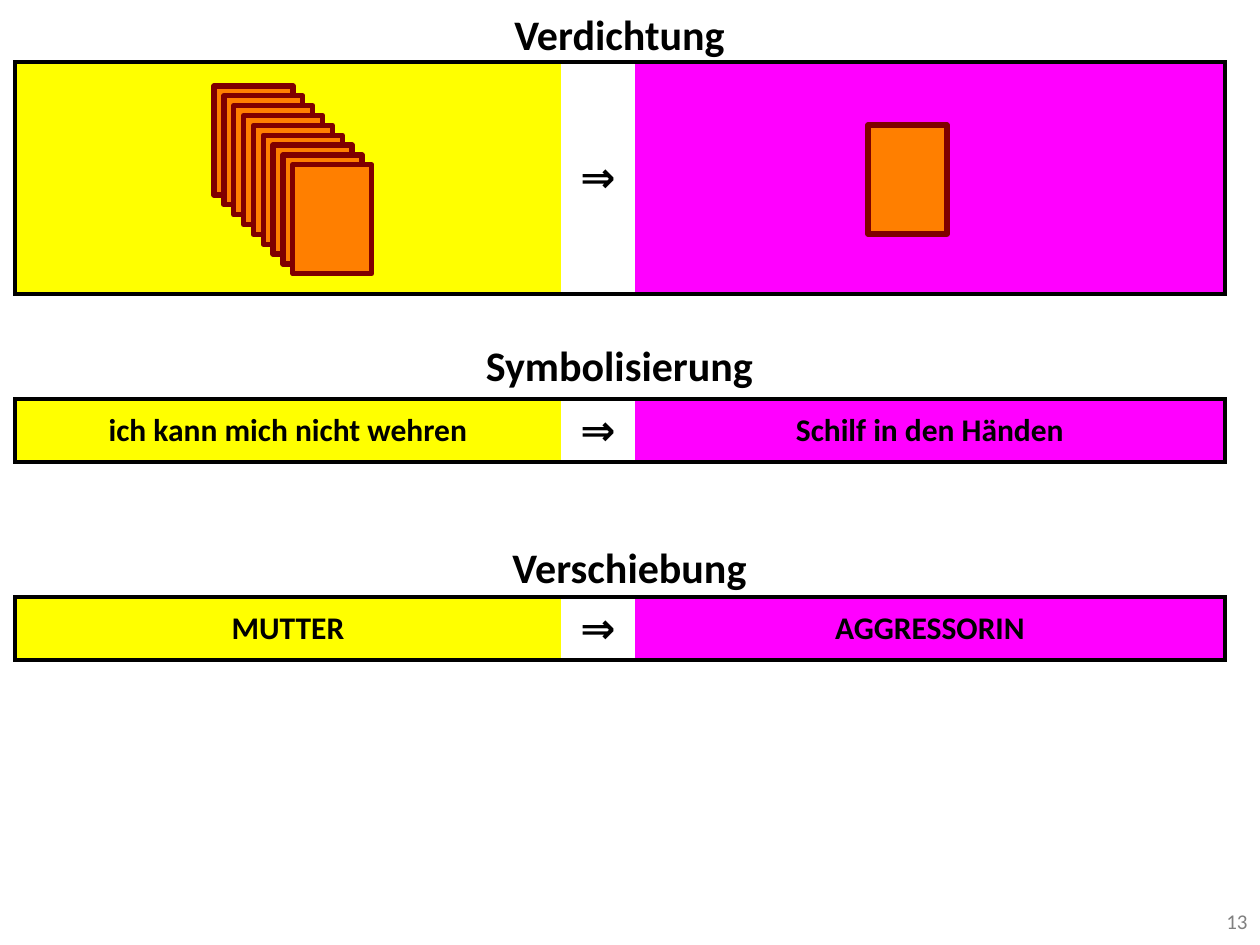
"""Build a slide on condensation, symbolisation and displacement."""
import dataclasses
import typing

import lxml.etree
import pptx
import pptx.dml.color
import pptx.enum.shapes
import pptx.enum.text
import pptx.oxml.ns
import pptx.util

PX = 914400 / 126
BLACK = pptx.dml.color.RGBColor(0x00, 0x00, 0x00)
GRAY = pptx.dml.color.RGBColor(0x80, 0x80, 0x80)
YELLOW = pptx.dml.color.RGBColor(0xFF, 0xFF, 0x00)
MAGENTA = pptx.dml.color.RGBColor(0xFF, 0x00, 0xFF)
ORANGE = pptx.dml.color.RGBColor(0xFF, 0x7F, 0x00)
MAROON = pptx.dml.color.RGBColor(0x7F, 0x00, 0x00)
FONT = "Calibri"
ARROW = "⇒"
CENTER = pptx.enum.text.PP_ALIGN.CENTER
RIGHT = pptx.enum.text.PP_ALIGN.RIGHT
MIDDLE = pptx.enum.text.MSO_ANCHOR.MIDDLE
COLUMNS = (546, 74, 590)
TABLE_LEFT = 15
HEADING_WIDTH, HEADING_HEIGHT = 1071, 49
CARD_WIDTH, CARD_HEIGHT = 79, 109
STACK_SIZE = 9
STACK_LEFT, STACK_TOP, STACK_STEP = 214, 86, 9.85


@dataclasses.dataclass(frozen=True)
class Section:
    """A heading above a row that turns one content into another."""

    heading: str
    heading_left: int
    heading_top: int
    table_top: int
    table_height: int
    source: str = ""
    target: str = ""
    is_title: bool = False


SECTIONS = (
    Section("Verdichtung", 84, 9, 62, 232),
    Section("Symbolisierung", 84, 340, 399, 63,
            "ich kann mich nicht wehren", "Schilf in den Händen"),
    Section("Verschiebung", 94, 542, 597, 63, "MUTTER", "AGGRESSORIN", True),
)


def px(length: float) -> pptx.util.Emu:
    """Turn pixels into EMU."""
    return pptx.util.Emu(round(length * PX))


def place(shape: typing.Any, left: float, top: float, width: float, height: float) -> None:
    """Move and size a shape in pixels."""
    shape.left, shape.top = px(left), px(top)
    shape.width, shape.height = px(width), px(height)


def write(frame: typing.Any, text: str, size: int, bold: bool = True,
          color: pptx.dml.color.RGBColor = BLACK, align: typing.Any = CENTER) -> None:
    """Write one formatted run into a text frame."""
    para = frame.paragraphs[0]
    para.alignment = align
    span = para.add_run()
    span.text = text
    span.font.name = FONT
    span.font.size = pptx.util.Pt(size)
    span.font.bold = bold
    span.font.color.rgb = color


def set_borders(cell: typing.Any, sides: str) -> None:
    """Draw the named sides of a cell and hide the others."""
    properties = cell._tc.get_or_add_tcPr()
    for side in "LRTB":
        line = lxml.etree.SubElement(properties, pptx.oxml.ns.qn(f"a:ln{side}"))
        if side not in sides:
            lxml.etree.SubElement(line, pptx.oxml.ns.qn("a:noFill"))
            continue
        line.set("w", str(pptx.util.Pt(2.25)))
        fill = lxml.etree.SubElement(line, pptx.oxml.ns.qn("a:solidFill"))
        lxml.etree.SubElement(fill, pptx.oxml.ns.qn("a:srgbClr"), val=str(BLACK))


def add_row(page: typing.Any, section: Section) -> None:
    """Add the three-cell table of a section."""
    table = page.shapes.add_table(
        1, len(COLUMNS), px(TABLE_LEFT), px(section.table_top),
        px(sum(COLUMNS)), px(section.table_height)).table
    table.first_row = table.horz_banding = False
    contents = (
        (section.source, 18, YELLOW, "LTB"),
        (ARROW, 24, None, "TB"),
        (section.target, 18, MAGENTA, "RTB"),
    )
    for index, (text, size, color, sides) in enumerate(contents):
        table.columns[index].width = px(COLUMNS[index])
        cell = table.cell(0, index)
        cell.vertical_anchor = MIDDLE
        set_borders(cell, sides)
        if color is None:
            cell.fill.background()
        else:
            cell.fill.solid()
            cell.fill.fore_color.rgb = color
        if text:
            write(cell.text_frame, text, size)


def add_label(page: typing.Any, left: int, top: int, width: int, height: int) -> typing.Any:
    """Add an empty wrapping text box."""
    box = page.shapes.add_textbox(px(left), px(top), px(width), px(height))
    box.text_frame.word_wrap = True
    box.text_frame.vertical_anchor = MIDDLE
    return box


def add_heading(page: typing.Any, section: Section) -> None:
    """Write a section heading, using the title placeholder where marked."""
    bounds = (section.heading_left, section.heading_top, HEADING_WIDTH, HEADING_HEIGHT)
    if section.is_title:
        box = page.shapes.title
        place(box, *bounds)
        box.text_frame.vertical_anchor = MIDDLE
        box.text_frame.auto_size = pptx.enum.text.MSO_AUTO_SIZE.NONE
    else:
        box = add_label(page, *bounds)
    write(box.text_frame, section.heading, 24)


def add_card(page: typing.Any, left: float, top: float) -> None:
    """Add one orange card."""
    card = page.shapes.add_shape(
        pptx.enum.shapes.MSO_SHAPE.RECTANGLE,
        px(left), px(top), px(CARD_WIDTH), px(CARD_HEIGHT))
    card.shadow.inherit = False
    card.fill.solid()
    card.fill.fore_color.rgb = ORANGE
    card.line.color.rgb = MAROON
    card.line.width = pptx.util.Pt(3)


def main() -> None:
    """Build and save the deck."""
    deck = pptx.Presentation()
    deck.slide_width, deck.slide_height = px(1260), px(945)
    page = deck.slides.add_slide(deck.slide_layouts[5])
    for section in SECTIONS:
        add_row(page, section)
        add_heading(page, section)
    for index in range(STACK_SIZE):
        add_card(page, STACK_LEFT + index * STACK_STEP, STACK_TOP + index * STACK_STEP)
    add_card(page, 868, 125)
    number = add_label(page, 1207, 900, 53, 42)
    write(number.text_frame, "13", 12, False, GRAY, RIGHT)
    deck.save("out.pptx")


if __name__ == "__main__":
    main()
